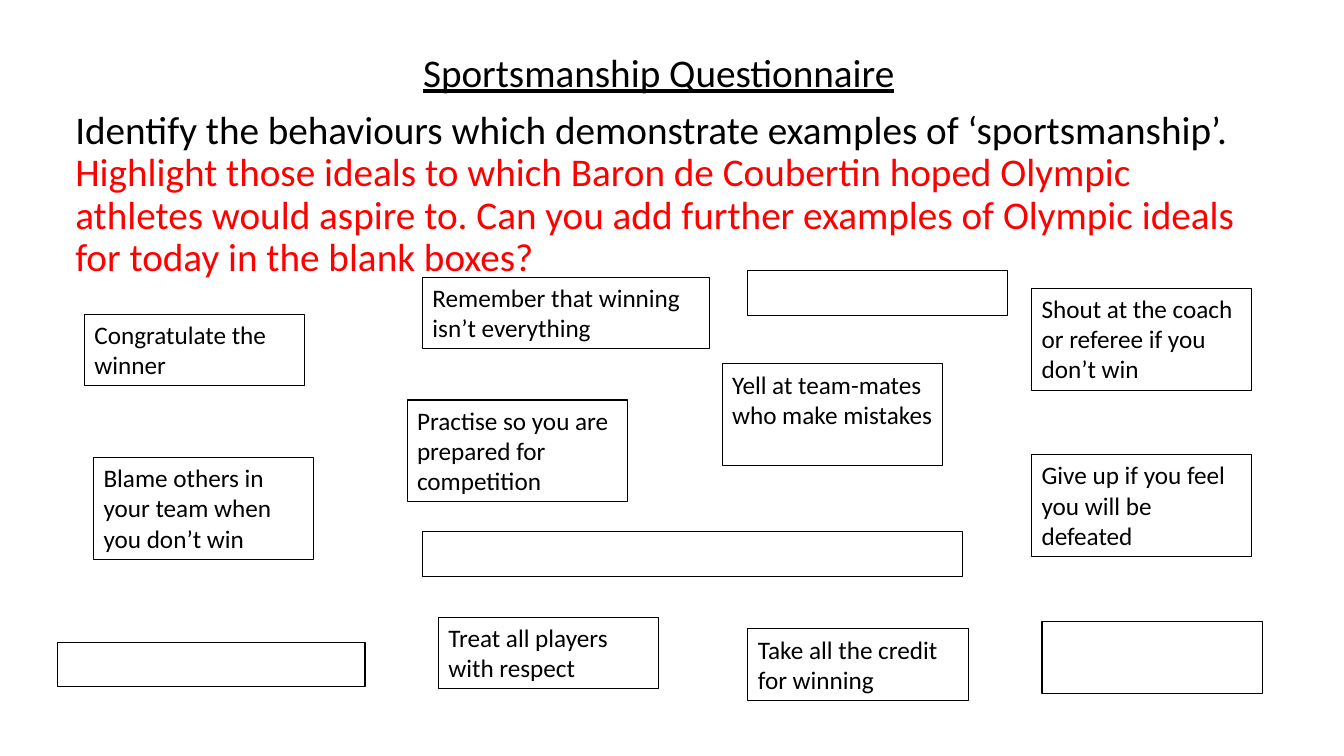
from pptx import Presentation
from pptx.dml.color import RGBColor
from pptx.enum.shapes import MSO_SHAPE as Shape
from pptx.enum.text import MSO_ANCHOR as Anchor, MSO_AUTO_SIZE as AutoSize, PP_ALIGN as Align
from pptx.util import Cm, Pt

# Content
HEADING = "Sportsmanship Questionnaire"
TASK = "Identify the behaviours which demonstrate examples of ‘sportsmanship’. "
EXTENSION = (
    "Highlight those ideals to which Baron de Coubertin hoped Olympic athletes "
    "would aspire to. Can you add further examples of Olympic ideals for today "
    "in the blank boxes?"
)

BLACK = RGBColor(0, 0, 0)
RED = RGBColor(255, 0, 0)
FONT = "Calibri"

# Box sizes in cm: usual width, and height by number of text lines
CARD = 5.55
HEIGHTS = {1: 1.13, 2: 1.8, 3: 2.57}

# Text, left, top, width, lines
BOXES = [
    ("Congratulate the winner", 2.13, 7.92, CARD, 2),
    ("Blame others in your team when you don’t win", 2.36, 11.53, CARD, 3),
    ("Treat all players with respect", 11.05, 15.55, CARD, 2),
    ("Take all the credit for winning", 18.85, 15.85, CARD, 2),
    ("Yell at team-mates who make mistakes", 18.2, 9.17, CARD, 3),
    ("Practise so you are prepared for competition", 10.26, 10.08, CARD, 3),
    ("Shout at the coach or referee if you don’t win", 26, 7.26, CARD, 3),
    ("Give up if you feel you will be defeated", 26, 11.46, CARD, 3),
    ("Remember that winning isn’t everything", 10.65, 6.99, 7.24, 2),
    ("", 1.45, 16.18, 7.75, 1),
    ("", 18.85, 6.81, 6.53, 1),
    ("", 10.65, 13.39, 13.61, 1),
    ("", 26.26, 15.67, CARD, 2),
]


def place(box, left, top, width, height):
    box.left, box.top, box.width, box.height = map(Cm, (left, top, width, height))


def set_frame(box):
    frame = box.text_frame
    frame.word_wrap = True
    frame.auto_size = AutoSize.NONE
    frame.vertical_anchor = Anchor.TOP
    return frame.paragraphs[0]


def add_span(para, text, size, color=BLACK, underline=False):
    span = para.add_run()
    span.text = text
    span.font.name = FONT
    span.font.size = Pt(size)
    span.font.color.rgb = color
    span.font.underline = underline


deck = Presentation()
deck.slide_width, deck.slide_height = Cm(33.87), Cm(19.05)
page = deck.slides.add_slide(deck.slide_layouts[5])

# Heading
title = page.shapes.title
place(title, 1.65, 1.22, 29.9, 1.45)
para = set_frame(title)
para.alignment = Align.CENTER
para.line_spacing = 0.9
add_span(para, HEADING, 28, underline=True)

# Instructions
intro = page.shapes.add_textbox(0, 0, 0, 0)
place(intro, 1.65, 2.66, 29.9, 4.62)
para = set_frame(intro)
para.line_spacing = 0.9
add_span(para, TASK, 28)
add_span(para, EXTENSION, 28, RED)

# Behaviour boxes and blank boxes
for text, left, top, width, lines in BOXES:
    box = page.shapes.add_shape(
        Shape.RECTANGLE, Cm(left), Cm(top), Cm(width), Cm(HEIGHTS[lines])
    )
    box.shadow.inherit = False
    box.fill.background()
    box.line.color.rgb = BLACK
    box.line.width = Pt(0.75)
    if text:
        para = set_frame(box)
        para.alignment = Align.LEFT
        add_span(para, text, 18)

deck.save("out.pptx")
